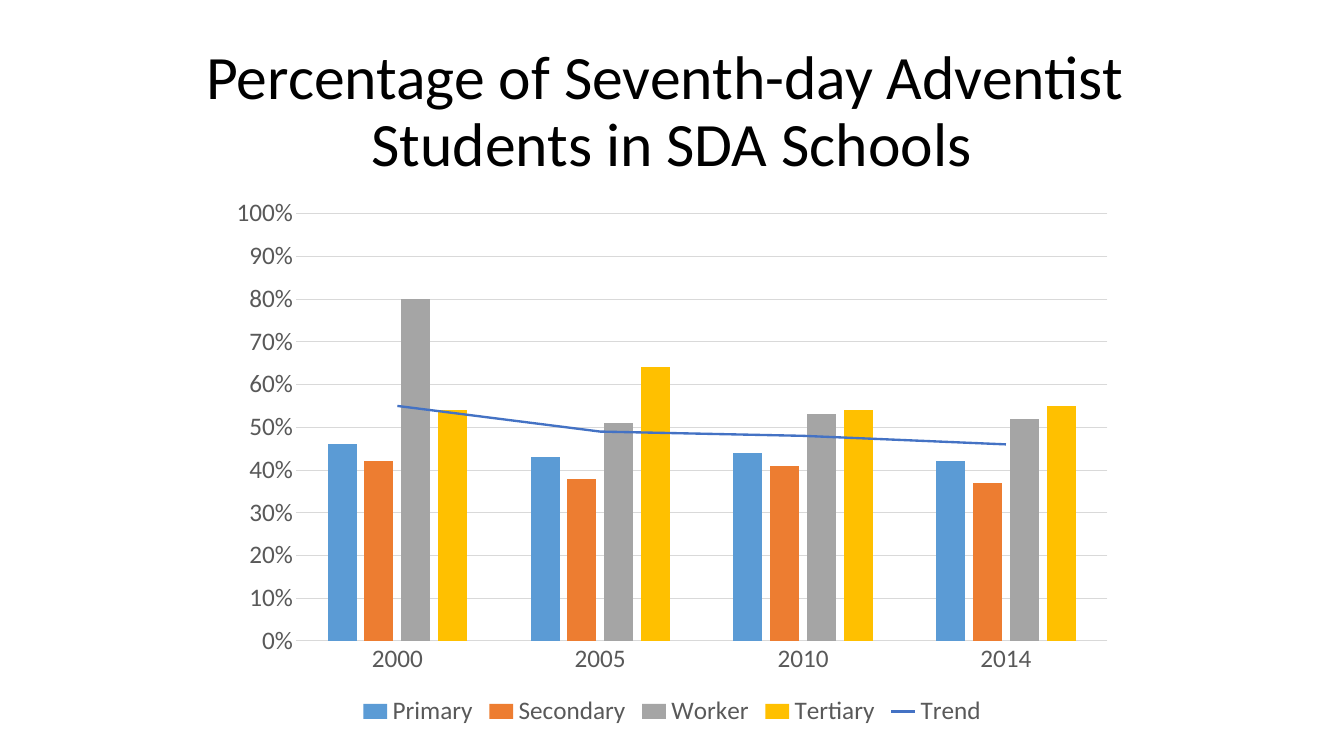
"""Build a slide charting the share of Adventist students by school level."""
from lxml import etree
from pptx import Presentation, util as u
from pptx.chart.data import CategoryChartData
from pptx.dml.color import RGBColor
from pptx.enum import chart as ch, text
from pptx.oxml import parse_xml
from pptx.oxml.ns import nsdecls, qn

TITLE = ("Percentage of Seventh-day Adventist ", "Students in SDA Schools")
YEARS = ("2000", "2005", "2010", "2014")
LEVELS = {
    "Primary": (0.46, 0.43, 0.44, 0.42),
    "Secondary": (0.42, 0.38, 0.41, 0.37),
    "Worker": (0.8, 0.51, 0.53, 0.52),
    "Tertiary": (0.54, 0.64, 0.54, 0.55),
    "Trend": (0.55, 0.49, 0.48, 0.46),
}
THEME = {
    "font": "Calibri", "head": 58.7, "label": 24, "ink": "000000",
    "soft": "595959", "rule": "D9D9D9", "trend": "4472C4",
    "bars": ("5B9BD5", "ED7D31", "A5A5A5", "FFC000"),
}
SIZE = (17.78, 10)
HEAD = (1.22, 0.53, 15.33, 1.93)
PLOT = (2.89, 2.48, 12, 7.2)


def apply(item, vals):
    for key, val in vals.items():
        setattr(item, key, val)


def style(font, size, tint):
    apply(font, {"name": THEME["font"], "size": u.Pt(size), "bold": False})
    font.color.rgb = RGBColor.from_string(tint)


def stroke(line, tint, width):
    line.color.rgb = RGBColor.from_string(tint)
    line.width = u.Pt(width)


def add_title(slide):
    frame = slide.shapes.add_textbox(*map(u.Inches, HEAD)).text_frame
    apply(frame, {
        "word_wrap": True, "vertical_anchor": text.MSO_ANCHOR.MIDDLE,
        "margin_left": u.Inches(0.16), "margin_right": u.Inches(0.16),
        "margin_top": u.Inches(0.08), "margin_bottom": u.Inches(0.08),
    })
    para = frame.paragraphs[0]
    apply(para, {"alignment": text.PP_ALIGN.CENTER, "line_spacing": 0.9})
    para.text = "\v".join(TITLE)
    style(para.font, THEME["head"], THEME["ink"])
    for run in para.runs:
        style(run.font, THEME["head"], THEME["ink"])


def split_trend(chart):
    bars = chart.plots[0]._element
    trend = bars.findall(qn("c:ser"))[-1]
    for flag in trend.findall(qn("c:invertIfNegative")):
        trend.remove(flag)
    line = parse_xml(
        f'<c:lineChart {nsdecls("c")}><c:grouping val="standard"/>'
        '<c:varyColors val="0"/></c:lineChart>')
    line.append(trend)
    etree.SubElement(line, qn("c:marker")).set("val", "1")
    for axis in bars.findall(qn("c:axId")):
        etree.SubElement(line, qn("c:axId")).set("val", axis.get("val"))
    bars.addnext(line)


def add_chart(slide):
    data = CategoryChartData(number_format="0%")
    data.categories = YEARS
    for name, vals in LEVELS.items():
        data.add_series(name, vals)
    chart = slide.shapes.add_chart(
        ch.XL_CHART_TYPE.COLUMN_CLUSTERED, *map(u.Inches, PLOT), data).chart
    apply(chart, {"has_title": False, "has_legend": True})
    style(chart.font, THEME["label"], THEME["soft"])
    apply(chart.legend, {"position": ch.XL_LEGEND_POSITION.BOTTOM,
                         "include_in_layout": False})
    style(chart.legend.font, THEME["label"], THEME["soft"])

    split_trend(chart)
    bars, line = chart.plots
    apply(bars, {"gap_width": 219, "overlap": -27, "vary_by_categories": False})
    for level, tint in zip(bars.series, THEME["bars"]):
        level.format.fill.solid()
        level.format.fill.fore_color.rgb = RGBColor.from_string(tint)
    trend = line.series[0]
    trend.smooth = False
    trend.marker.style = ch.XL_MARKER_STYLE.NONE
    stroke(trend.format.line, THEME["trend"], 2.25)

    years, share = chart.category_axis, chart.value_axis
    for axis in (years, share):
        apply(axis, {"major_tick_mark": ch.XL_TICK_MARK.NONE,
                     "minor_tick_mark": ch.XL_TICK_MARK.NONE})
        style(axis.tick_labels.font, THEME["label"], THEME["soft"])
    stroke(years.format.line, THEME["rule"], 0.75)
    apply(share, {"minimum_scale": 0, "maximum_scale": 1, "major_unit": 0.1,
                  "has_major_gridlines": True})
    apply(share.tick_labels, {"number_format": "0%",
                              "number_format_is_linked": False})
    share.format.line.fill.background()
    stroke(share.major_gridlines.format.line, THEME["rule"], 0.75)


def main():
    deck = Presentation()
    deck.slide_width, deck.slide_height = map(u.Inches, SIZE)
    slide = deck.slides.add_slide(deck.slide_layouts[6])
    add_title(slide)
    add_chart(slide)
    deck.save("out.pptx")


if __name__ == "__main__":
    main()
